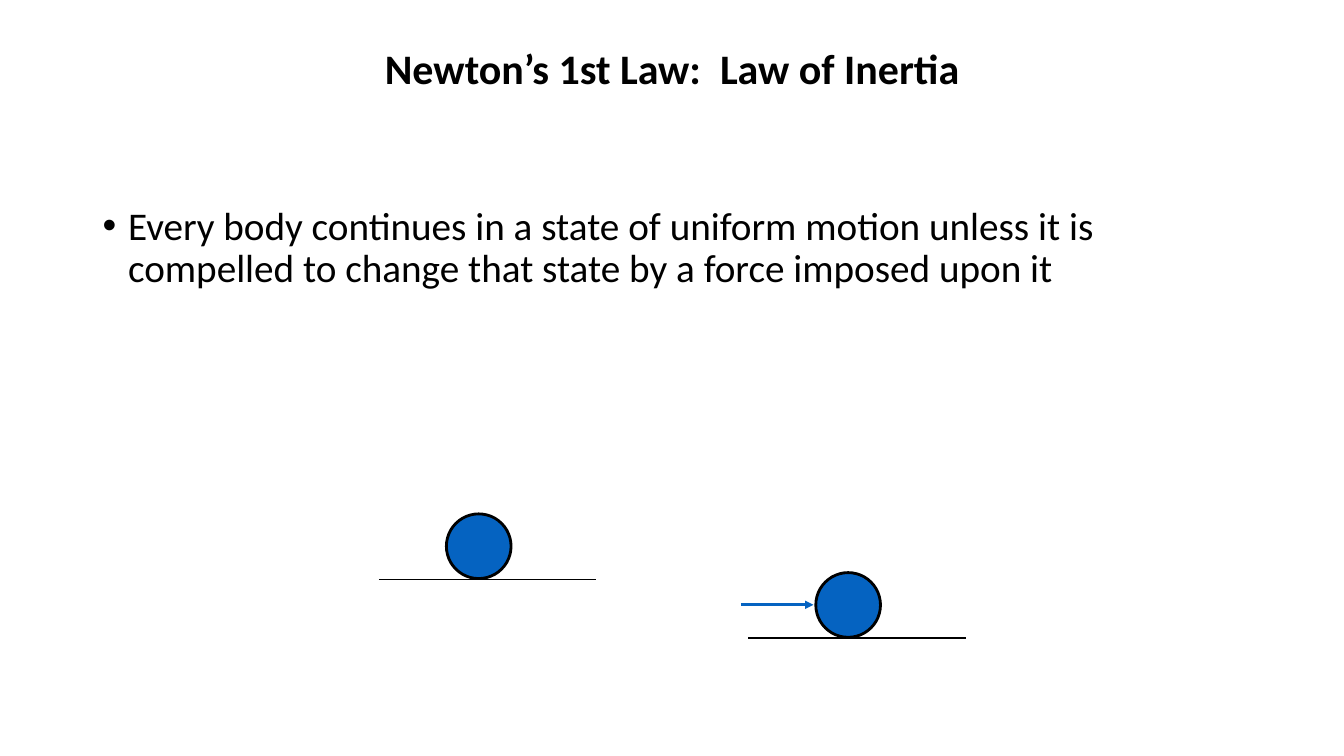
import pptx
import pptx.util
import pptx.dml.color
import pptx.enum.shapes
import pptx.enum.text
import pptx.oxml.ns
import lxml.etree

Cm = pptx.util.Cm
Pt = pptx.util.Pt
COLORS = {"text": "000000", "ball": "0563C1", "background": "FFFFFF"}


def color(name):
    return pptx.dml.color.RGBColor.from_string(COLORS[name])


def add_child(parent, tag, **attributes):
    return lxml.etree.SubElement(parent, pptx.oxml.ns.qn(tag), attributes)


def write_text(shape, text, size, bold=False, align="LEFT", anchor="TOP", before=0, bullet=None):
    frame = shape.text_frame
    frame.word_wrap = True
    frame.auto_size = pptx.enum.text.MSO_AUTO_SIZE.NONE
    frame.vertical_anchor = pptx.enum.text.MSO_ANCHOR[anchor]
    paragraph = frame.paragraphs[0]
    paragraph.alignment = pptx.enum.text.PP_ALIGN[align]
    paragraph.line_spacing = 0.9
    paragraph.space_before = Pt(before)
    run = paragraph.add_run()
    run.text = text
    run.font.name = "Calibri"
    run.font.size = Pt(size)
    run.font.bold = bold
    run.font.color.rgb = color("text")
    if bullet:
        properties = paragraph._p.get_or_add_pPr()
        indent = int(Cm(0.64))
        properties.set("marL", str(indent))
        properties.set("indent", str(-indent))
        add_child(properties, "a:buFont", typeface="Arial")
        add_child(properties, "a:buChar", char=bullet)


class LawSlide:
    """Hold the slide and its style, and draw each kind of element."""

    ball_size = 1.63
    ground_length = 5.48

    def __init__(self, presentation):
        self.slide = presentation.slides.add_slide(presentation.slide_layouts[5])
        self.slide.background.fill.solid()
        self.slide.background.fill.fore_color.rgb = color("background")

    def title(self, text, left, top, width, height):
        shape = self.slide.shapes.title
        shape.left, shape.top, shape.width, shape.height = map(Cm, (left, top, width, height))
        write_text(shape, text, size=30, bold=True, align="CENTER", anchor="MIDDLE")

    def body(self, text, left, top, width, height):
        shape = self.slide.shapes.add_textbox(*map(Cm, (left, top, width, height)))
        write_text(shape, text, size=28, before=10, bullet="•")

    def line(self, left, right, y, line_color="text", weight=1, arrow=False):
        connector = self.slide.shapes.add_connector(
            pptx.enum.shapes.MSO_CONNECTOR.STRAIGHT, Cm(left), Cm(y), Cm(right), Cm(y))
        connector.line.color.rgb = color(line_color)
        connector.line.width = Pt(weight)
        if arrow:
            add_child(connector.line._get_or_add_ln(), "a:tailEnd", type="triangle")
        add_child(connector._element.spPr, "a:effectLst")

    def ball_on_ground(self, left, y):
        self.line(left, left + self.ground_length, y)
        ball = self.slide.shapes.add_shape(
            pptx.enum.shapes.MSO_SHAPE.OVAL, Cm(left + 1.7), Cm(y - 1.65),
            Cm(self.ball_size), Cm(self.ball_size))
        ball.shadow.inherit = False
        ball.fill.solid()
        ball.fill.fore_color.rgb = color("ball")
        ball.line.color.rgb = color("text")
        ball.line.width = Pt(2)


def main():
    presentation = pptx.Presentation()
    presentation.slide_width = Cm(33.87)
    presentation.slide_height = Cm(19.05)
    law = LawSlide(presentation)
    law.title("Newton’s 1st Law:  Law of Inertia", 6.15, 0.84, 21.59, 1.9)
    law.body("Every body continues in a state of uniform motion unless it is "
             "compelled to change that state by a force imposed upon it",
             2.34, 5.08, 29.21, 12.09)
    for left, y in ((9.55, 14.6), (18.86, 16.08)):
        law.ball_on_ground(left, y)
    law.line(18.67, 20.5, 15.24, line_color="ball", weight=2, arrow=True)
    presentation.save("out.pptx")


if __name__ == "__main__":
    main()
